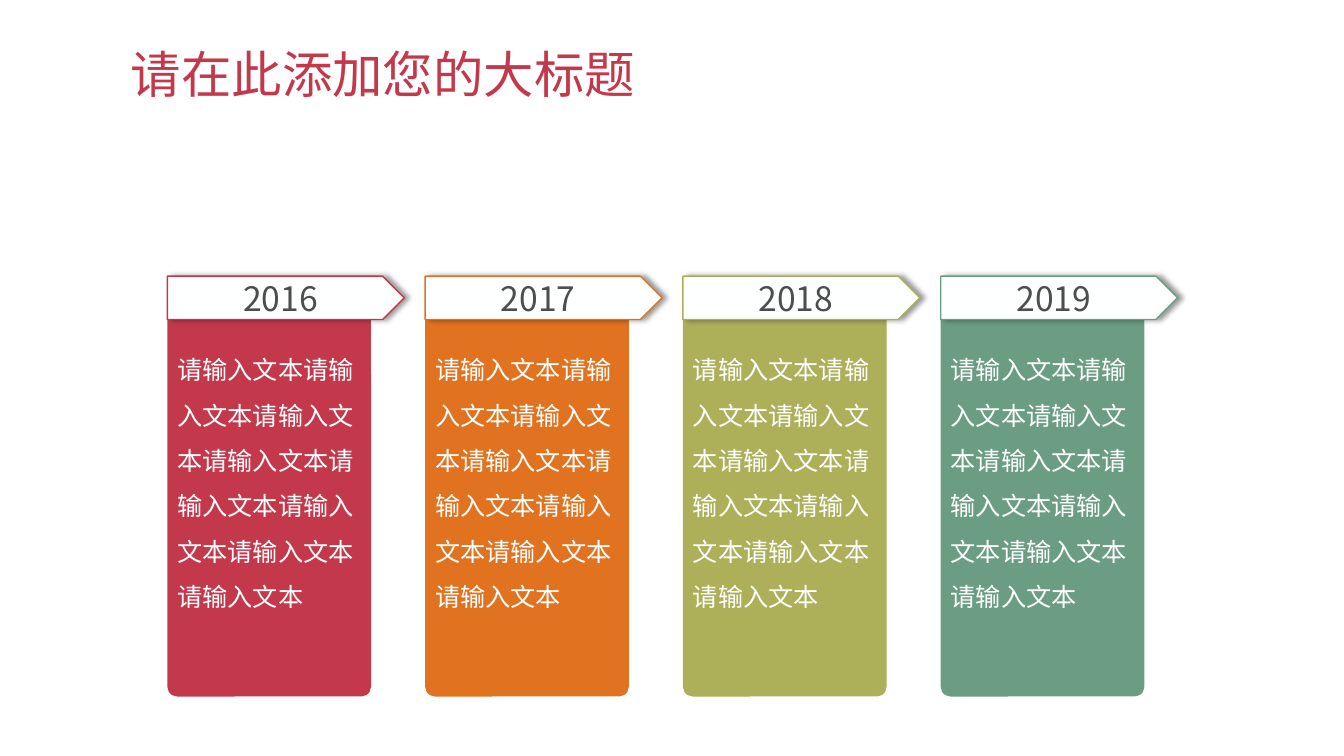
from lxml.etree import SubElement
from pptx import Presentation
from pptx.dml.color import RGBColor
from pptx.enum.shapes import MSO_SHAPE as Preset
from pptx.enum.text import MSO_ANCHOR as Anchor, PP_ALIGN as Align
from pptx.oxml.ns import qn
from pptx.util import Inches, Pt

FONT = "Noto Sans CJK SC"
RED, WHITE, GREY = "C4384C", "FEFFFF", "4D4D4D"
YEARS = [("2016", RED), ("2017", "E1721F"), ("2018", "ADAF59"), ("2019", "6B9D83")]
BODY = "请输入文本" * 8
FIRST_LEFT, LAST_LEFT = 1.66, 9.33
PITCH = (LAST_LEFT - FIRST_LEFT) / (len(YEARS) - 1)
TOP, CARD_WIDTH = 2.74, 2.02


def color(value):
    return RGBColor.from_string(value)


def write(holder, text, size, fill, align=Align.LEFT, anchor=Anchor.TOP, spacing=None):
    frame = holder.text_frame
    frame.word_wrap = True
    frame.vertical_anchor = anchor
    paragraph = frame.paragraphs[0]
    paragraph.alignment = align
    paragraph.line_spacing = spacing
    run = paragraph.add_run()
    run.text = text
    run.font.size = Pt(size)
    run.font.name = FONT
    run.font.color.rgb = color(fill)
    SubElement(run.font._element, qn("a:ea"), typeface=FONT)


class Timeline:
    def __init__(self, slide):
        self.shapes = slide.shapes

    def text(self, box, text, **style):
        write(self.shapes.add_textbox(*map(Inches, box)), text, **style)

    def shape(self, preset, box, fill, adjust=None):
        item = self.shapes.add_shape(preset, *map(Inches, box))
        item.shadow.inherit = False
        item.fill.solid()
        item.fill.fore_color.rgb = color(fill)
        item.line.fill.background()
        if adjust is not None:
            item.adjustments[0] = adjust
        return item

    def card(self, left, fill):
        self.shape(Preset.ROUNDED_RECTANGLE, (left, TOP, CARD_WIDTH, 4.17), fill, 0.048)

    def year_arrow(self, left, year, accent):
        arrow = self.shape(Preset.PENTAGON, (left, TOP, 2.35, 0.43), WHITE)
        arrow.line.color.rgb = color(accent)
        arrow.line.width = Pt(1)
        self.shadow(arrow)
        write(arrow, year, size=24, fill=GREY, align=Align.CENTER, anchor=Anchor.MIDDLE)

    def shadow(self, item):
        effects = item._element.spPr.find(qn("a:effectLst"))
        outer = SubElement(effects, qn("a:outerShdw"), blurRad=str(Pt(4)),
                           dist=str(Pt(3)), dir="0", algn="l", rotWithShape="0")
        tint = SubElement(outer, qn("a:srgbClr"), val="000000")
        SubElement(tint, qn("a:alpha"), val="40000")


def main():
    deck = Presentation()
    deck.slide_width, deck.slide_height = Inches(13.33), Inches(7.5)
    timeline = Timeline(deck.slides.add_slide(deck.slide_layouts[6]))
    timeline.text((1.2, 0.3, 10.94, 0.93), "请在此添加您的大标题",
                  size=36, fill=RED, anchor=Anchor.MIDDLE, spacing=0.9)
    for index, (year, accent) in enumerate(YEARS):
        left = FIRST_LEFT + index * PITCH
        timeline.card(left, accent)
        timeline.year_arrow(left, year, accent)
        timeline.text((left, 3.32, CARD_WIDTH, 3), BODY, size=18, fill=WHITE, spacing=1.5)
    deck.save("out.pptx")


if __name__ == "__main__":
    main()
